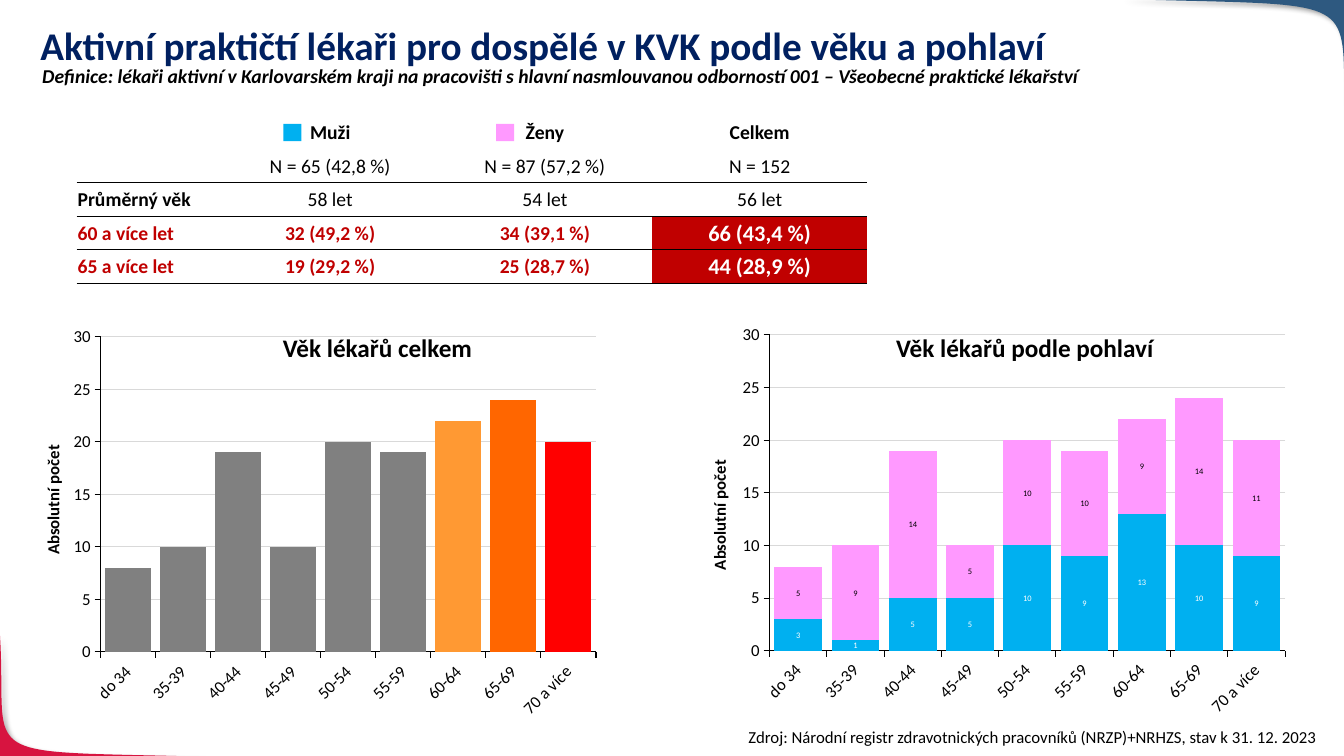
from dataclasses import dataclass
from typing import NamedTuple
from lxml.etree import SubElement
from pptx import Presentation
from pptx.chart.data import CategoryChartData
from pptx.dml.color import RGBColor
from pptx.enum.chart import XL_CHART_TYPE, XL_TICK_MARK
from pptx.enum.shapes import MSO_SHAPE
from pptx.enum.text import MSO_ANCHOR, PP_ALIGN
from pptx.oxml import parse_xml
from pptx.oxml.ns import nsdecls, qn
from pptx.util import Inches, Pt

WIDE, HIGH = Inches(13.33), Inches(7.5)
FONT = "Calibri"
BLACK, WHITE, RED, MALE, FEMALE = "000000", "FFFFFF", "C00000", "00B0F0", "FF99FF"
AGES = ["do 34", "35-39", "40-44", "45-49", "50-54", "55-59", "60-64", "65-69", "70 a více"]
NO_GRID = "{2D5ABB26-0587-4C30-8999-92F81FD0307C}"


class Box(NamedTuple):
    """A frame in percent of the slide's size."""
    left: float
    top: float
    wide: float
    high: float


@dataclass
class Bars:
    """One series of columns."""
    vals: list
    fill: str
    label: str = ""


@dataclass
class Graph:
    """A chart with its heading and axis name."""
    box: Box
    head: Box
    side: Box
    title: str
    kind: XL_CHART_TYPE
    bars: list
    marks: dict


@dataclass
class Corner:
    """A curved corner: start, two handles, end and tip."""
    fill: str
    curve: list
    tip: tuple


CORNERS = [
    Corner("D71440", [(15.98, 100.13), (-2.55, 99.2), (0.6, 101.2), (0, 84)], (-0.08, 100.13)),
    Corner("2E5980", [(83.35, -0.13), (102.78, 0.93), (99.47, -1.33), (100.15, 18.93)], (100.15, -0.13)),
]
GRAPHS = [
    Graph(Box(4.65, 41.87, 40.51, 54.13), Box(12.53, 43.33, 31.13, 5.33), Box(-0.98, 64.13, 9.83, 4),
          "Věk lékařů celkem", XL_CHART_TYPE.COLUMN_CLUSTERED,
          [Bars([8, 10, 19, 10, 20, 19, 22, 24, 20], "808080")],
          {6: "FF9933", 7: "FF6600", 8: "FF0000"}),
    Graph(Box(54.31, 41.6, 42.16, 54.27), Box(60.69, 43.33, 31.13, 5.33), Box(48.61, 66.13, 9.83, 4),
          "Věk lékařů podle pohlaví", XL_CHART_TYPE.COLUMN_STACKED,
          [Bars([3, 1, 5, 5, 10, 9, 13, 10, 9], MALE, WHITE),
           Bars([5, 9, 14, 5, 10, 10, 9, 14, 11], FEMALE, BLACK)], {}),
]
KEYS = [(Box(21.08, 16.4, 1.35, 2.27), MALE), (Box(36.91, 16.4, 1.35, 2.27), FEMALE)]
ROWS = [
    ["", "Muži", "Ženy", "Celkem"],
    ["", "N = 65 (42,8 %)", "N = 87 (57,2 %)", "N = 152"],
    ["Průměrný věk", "58 let", "54 let", "56 let"],
    ["60 a více let", "32 (49,2 %)", "34 (39,1 %)", "66 (43,4 %)"],
    ["65 a více let", "19 (29,2 %)", "25 (28,7 %)", "44 (28,9 %)"],
]
RULED = {1: ["b"], 2: ["t", "b"], 3: ["t"], 4: ["b"]}


def tint(code: str) -> RGBColor:
    """Turn a hex string into a colour."""
    return RGBColor.from_string(code)


def across(share: float) -> int:
    """Percent of the slide's width as a length."""
    return round(WIDE * share / 100)


def down(share: float) -> int:
    """Percent of the slide's height as a length."""
    return round(HIGH * share / 100)


def frame(box: Box) -> tuple:
    """Turn a box into left, top, width and height."""
    return across(box.left), down(box.top), across(box.wide), down(box.high)


def style(font, size=12, color=BLACK, bold=False, slant=False) -> None:
    """Format a font."""
    font.name, font.size, font.bold, font.italic = FONT, Pt(size), bold, slant
    font.color.rgb = tint(color)


def write(body, text: str, align=PP_ALIGN.LEFT, **form) -> None:
    """Put formatted text into a text frame."""
    line = body.paragraphs[0]
    line.alignment = align
    run = line.add_run()
    run.text = text
    style(run.font, **form)


def label(page, box: Box, text: str, turn=0, wrap=True, **form) -> None:
    """Add a text box."""
    shape = page.shapes.add_textbox(*frame(box))
    shape.rotation = turn
    shape.text_frame.word_wrap = wrap
    write(shape.text_frame, text, **form)


def paint(shape, fill: str) -> None:
    """Give a shape a flat fill with no line or shadow."""
    shape.fill.solid()
    shape.fill.fore_color.rgb = tint(fill)
    shape.line.fill.background()
    shape.shadow.inherit = False


def bend(page, corner: Corner) -> None:
    """Draw a curved corner with a soft shadow."""
    steps = 40
    spots = []
    for step in range(steps + 1):
        t = step / steps
        parts = ((1 - t) ** 3, 3 * t * (1 - t) ** 2, 3 * t * t * (1 - t), t ** 3)
        spots.append(tuple(sum(p * spot[axis] for p, spot in zip(parts, corner.curve)) for axis in (0, 1)))
    spots = [(across(x), down(y)) for x, y in spots + [corner.tip]]
    pen = page.shapes.build_freeform(*spots[0])
    pen.add_line_segments(spots[1:], close=True)
    shape = pen.convert_to_shape()
    paint(shape, corner.fill)
    glow = shape.element.spPr.find(qn("a:effectLst"))
    glow.append(parse_xml(
        f'<a:outerShdw {nsdecls("a")} blurRad="{Pt(4)}" dist="{Pt(3)}" dir="2700000" algn="tl" '
        'rotWithShape="0"><a:srgbClr val="000000"><a:alpha val="40000"/></a:srgbClr></a:outerShdw>'))


def rule(cell, edge: str) -> None:
    """Draw one black border of a cell."""
    line = SubElement(cell._tc.get_or_add_tcPr(), qn(f"a:ln{edge.upper()}"), w=str(Pt(1)))
    SubElement(SubElement(line, qn("a:solidFill")), qn("a:srgbClr"), val=BLACK)


def draw_table(page, box: Box) -> None:
    """Add the table of counts by sex."""
    grid = page.shapes.add_table(len(ROWS), len(ROWS[0]), *frame(box)).table
    grid.first_row = grid.horz_banding = False
    grid._tbl.tblPr.find(qn("a:tableStyleId")).text = NO_GRID
    for col, share in zip(grid.columns, [10.88] + [15.98] * 3):
        col.width = across(share)
    for r, row in enumerate(ROWS):
        for c, text in enumerate(row):
            cell = grid.cell(r, c)
            cell.margin_left = cell.margin_right = cell.margin_top = Inches(0.01)
            cell.margin_bottom = 0
            cell.vertical_anchor = MSO_ANCHOR.MIDDLE
            for edge in RULED.get(r, []):
                rule(cell, edge)
            strong = r > 2 and c == 3
            if strong:
                cell.fill.solid()
                cell.fill.fore_color.rgb = tint(RED)
            else:
                cell.fill.background()
            if text:
                write(cell.text_frame, text, PP_ALIGN.CENTER if c else PP_ALIGN.LEFT,
                      size=16 if strong else 14, bold=r in (0, 3, 4) or c == 0,
                      color=WHITE if strong else RED if r > 2 else BLACK)


def draw_graph(page, graph: Graph) -> None:
    """Add a column chart and its axis name."""
    data = CategoryChartData(number_format="0")
    data.categories = AGES
    for n, bars in enumerate(graph.bars, 1):
        data.add_series(f"Series {n}", bars.vals)
    chart = page.shapes.add_chart(graph.kind, *frame(graph.box), data).chart
    chart.has_legend = chart.has_title = False
    style(chart.font)
    plot = chart.plots[0]
    plot.gap_width, plot.vary_by_categories = 20, False
    if graph.kind == XL_CHART_TYPE.COLUMN_STACKED:
        plot.overlap = 100
    for series, bars in zip(plot.series, graph.bars):
        series.format.fill.solid()
        series.format.fill.fore_color.rgb = tint(bars.fill)
        series.invert_if_negative = False
        if bars.label:
            series.data_labels.show_value = True
            style(series.data_labels.font, size=6, color=bars.label)
    for spot, fill in graph.marks.items():
        point = plot.series[0].points[spot].format.fill
        point.solid()
        point.fore_color.rgb = tint(fill)
    vals, cats = chart.value_axis, chart.category_axis
    vals.minimum_scale, vals.maximum_scale, vals.major_unit = 0, 30, 5
    vals.tick_labels.number_format, vals.tick_labels.number_format_is_linked = "0", False
    for axis in (vals, cats):
        axis.major_tick_mark = XL_TICK_MARK.OUTSIDE
        style(axis.tick_labels.font)
    for line, color in ((vals.format.line, BLACK), (cats.format.line, BLACK),
                        (vals.major_gridlines.format.line, "D9D9D9")):
        line.width, line.color.rgb = Pt(0.75), tint(color)
    cats._element.find(qn("c:txPr")).find(qn("a:bodyPr")).set("rot", "-2700000")
    area = chart._chartSpace.chart.plotArea
    for old in area.findall(qn("c:layout")):
        area.remove(old)
    pairs = dict(layoutTarget="inner", xMode="edge", yMode="edge", x=0.07, y=0.05, w=0.91, h=0.77)
    inner = "".join(f'<c:{name} val="{val}"/>' for name, val in pairs.items())
    area.insert(0, parse_xml(
        f'<c:layout {nsdecls("c")}><c:manualLayout>{inner}</c:manualLayout></c:layout>'))
    label(page, graph.side, "Absolutní počet", turn=270, wrap=False, align=PP_ALIGN.CENTER, bold=True)


def main() -> None:
    """Build and save the slide."""
    deck = Presentation()
    deck.slide_width, deck.slide_height = WIDE, HIGH
    page = deck.slides.add_slide(deck.slide_layouts[5])
    for corner in CORNERS:
        bend(page, corner)
    head = page.shapes.title
    head.left, head.top, head.width, head.height = frame(Box(2.25, 2.4, 93.4, 7.87))
    head.text_frame.vertical_anchor = MSO_ANCHOR.MIDDLE
    write(head.text_frame, "Aktivní praktičtí lékaři pro dospělé v KVK podle věku a pohlaví",
          size=28, color="002060", bold=True)
    head.text_frame.paragraphs[0].line_spacing = 0.9
    page.shapes.element.append(head.element)
    label(page, Box(2.4, 7.73, 94.6, 4.53),
          "Definice: lékaři aktivní v Karlovarském kraji na pracovišti s hlavní nasmlouvanou "
          "odborností 001 – Všeobecné praktické lékařství", size=14, bold=True, slant=True)
    for graph in GRAPHS:
        draw_graph(page, graph)
    for box, fill in KEYS:
        paint(page.shapes.add_shape(MSO_SHAPE.RECTANGLE, *frame(box)), fill)
    for graph in GRAPHS:
        label(page, graph.head, graph.title, align=PP_ALIGN.CENTER, size=18, bold=True)
    draw_table(page, Box(5.7, 15.33, 58.8, 22.13))
    label(page, Box(45.69, 95.47, 53.04, 4),
          "Zdroj: Národní registr zdravotnických pracovníků (NRZP)+NRHZS, stav k 31. 12. 2023",
          align=PP_ALIGN.RIGHT)
    deck.save("out.pptx")


if __name__ == "__main__":
    main()
